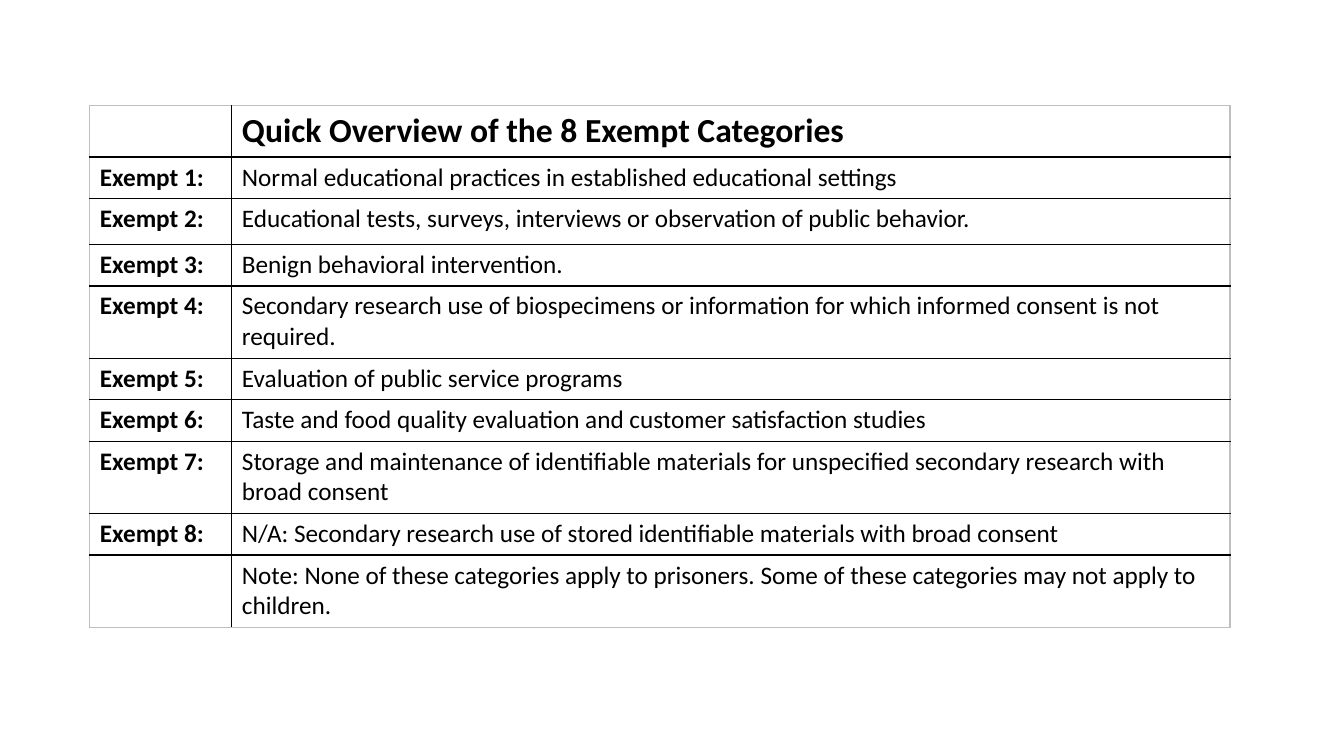
from lxml import etree
from pptx import Presentation
from pptx import util as u
from pptx.dml.color import RGBColor
from pptx.oxml import ns

HEADING = "Quick Overview of the 8 Exempt Categories"
CATEGORIES = [
    "Normal educational practices in established educational settings",
    "Educational tests, surveys, interviews or observation of public behavior.",
    "Benign behavioral intervention.",
    "Secondary research use of biospecimens or information for which informed consent is not required.",
    "Evaluation of public service programs",
    "Taste and food quality evaluation and customer satisfaction studies",
    "Storage and maintenance of identifiable materials for unspecified secondary research with broad consent",
    "N/A: Secondary research use of stored identifiable materials with broad consent",
]
NOTE = ("Note: None of these categories apply to prisoners. "
        "Some of these categories may not apply to children.")

PX = u.Inches(1) // 100
SLIDE = (1333, 750)
LEFT, TOP = 89, 105
COLUMNS = [141, 990]
ROWS = [50, 41, 46, 41, 72, 41, 41, 72, 41, 72]
COLORS = {"text": "000000", "inner": "000000", "outer": "BFBFBF"}
HEADING_FONT = {"size": u.Pt(24), "bold": True}
LABEL_FONT = {"size": u.Pt(18), "bold": True}
BODY_FONT = {"size": u.Pt(18), "bold": False}


def write(cell, words, font_format):
    span = cell.text_frame.paragraphs[0].add_run()
    span.text = words
    for name, value in {"name": "Calibri", **font_format}.items():
        setattr(span.font, name, value)
    span.font.color.rgb = RGBColor.from_string(COLORS["text"])


def set_borders(cell, outer_sides):
    """Draw all four sides, with the outer colour on the named ones."""
    properties = cell._tc.get_or_add_tcPr()
    for place, side in enumerate("LRTB"):
        line = etree.Element(ns.qn(f"a:ln{side}"), w=str(u.Pt(1)))
        fill = etree.SubElement(line, ns.qn("a:solidFill"))
        color = COLORS["outer" if side in outer_sides else "inner"]
        etree.SubElement(fill, ns.qn("a:srgbClr"), val=color)
        properties.insert(place, line)


def main():
    deck = Presentation()
    deck.slide_width, deck.slide_height = (side * PX for side in SLIDE)
    page = deck.slides.add_slide(deck.slide_layouts[6])

    labelled = [(f"Exempt {n}:", words) for n, words in enumerate(CATEGORIES, 1)]
    content = [("", HEADING), *labelled, ("", NOTE)]
    last_row, last_column = len(content) - 1, len(COLUMNS) - 1

    table = page.shapes.add_table(
        len(content), len(COLUMNS), LEFT * PX, TOP * PX,
        sum(COLUMNS) * PX, sum(ROWS) * PX).table
    table.first_row = table.horz_banding = False
    for column, width in zip(table.columns, COLUMNS):
        column.width = width * PX
    for row, height in zip(table.rows, ROWS):
        row.height = height * PX

    for r, texts in enumerate(content):
        formats = (LABEL_FONT, BODY_FONT if r else HEADING_FONT)
        for c, words in enumerate(texts):
            cell = table.cell(r, c)
            cell.fill.background()
            edges = {"L": c == 0, "R": c == last_column,
                     "T": r == 0, "B": r == last_row}
            set_borders(cell, [side for side, outer in edges.items() if outer])
            if words:
                write(cell, words, formats[c])

    deck.save("out.pptx")


if __name__ == "__main__":
    main()
